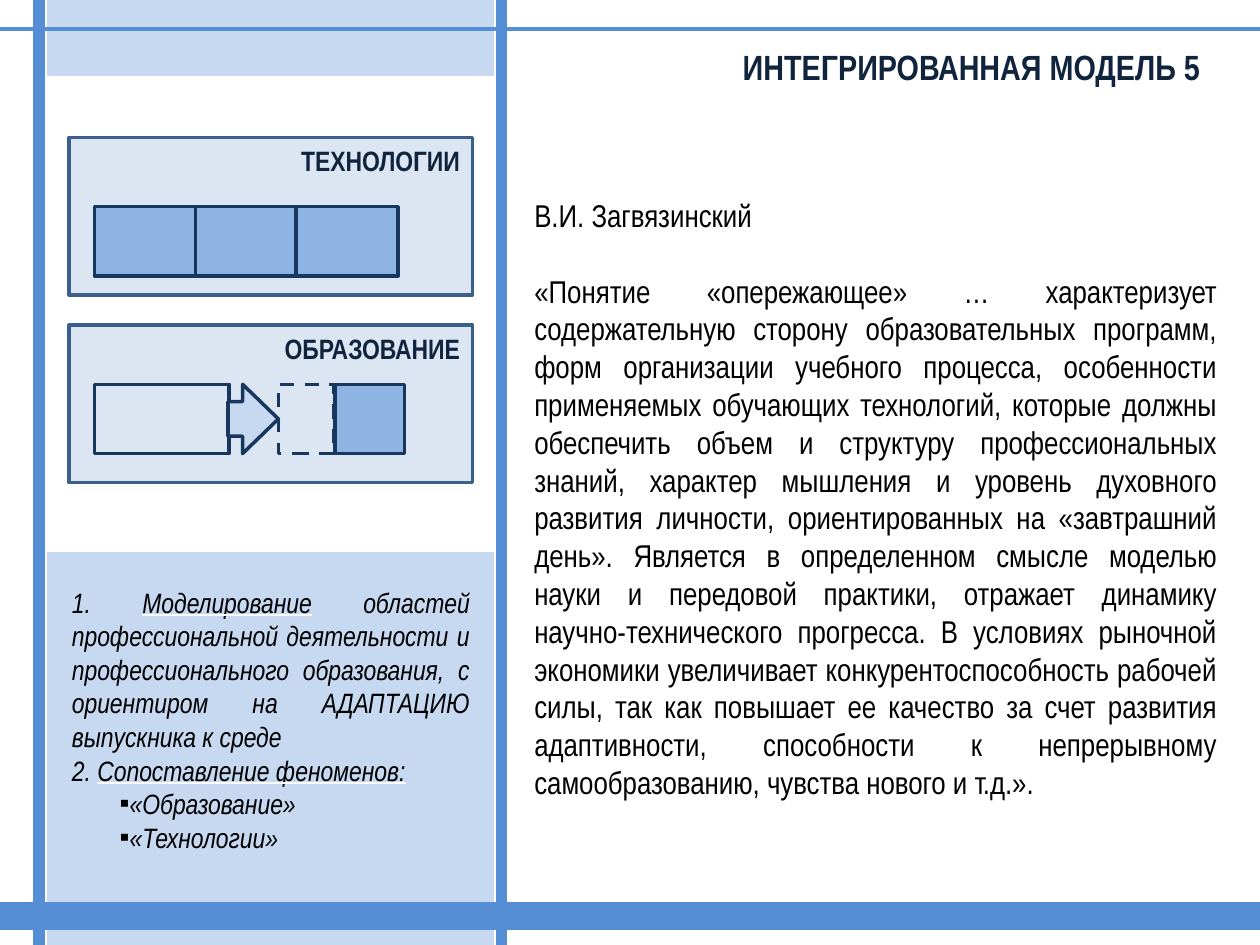
import pptx
import pptx.dml.color
import pptx.enum.dml
import pptx.enum.shapes
import pptx.enum.text
import pptx.oxml
import pptx.oxml.ns
import pptx.util

Inches, Pt = pptx.util.Inches, pptx.util.Pt
SHAPE = pptx.enum.shapes.MSO_SHAPE
ALIGN = pptx.enum.text.PP_ALIGN
ANCHOR = pptx.enum.text.MSO_ANCHOR
FONT = "Arial Narrow"
COLORS = {
    "white": "FFFFFF", "black": "000000", "navy": "10243E",
    "outline": "17375E", "frame": "3A5F8C", "bar": "558ED5",
    "band": "C6D9F1", "card": "DCE6F2", "block": "8EB4E3",
}
QUOTE = (
    "«Понятие «опережающее» … характеризует содержательную сторону "
    "образовательных программ, форм организации учебного процесса, особенности "
    "применяемых обучающих технологий, которые должны обеспечить объем и структуру "
    "профессиональных знаний, характер мышления и уровень духовного развития "
    "личности, ориентированных на «завтрашний день». Является в определенном смысле "
    "моделью науки и передовой практики, отражает динамику научно-технического "
    "прогресса. В условиях рыночной экономики увеличивает конкурентоспособность "
    "рабочей силы, так как повышает ее качество за счет развития адаптивности, "
    "способности к непрерывному самообразованию, чувства нового и т.д.». "
)


def rgb(name):
    return pptx.dml.color.RGBColor.from_string(COLORS[name])


def add_xml(parent, text):
    """Append a DrawingML element written without its namespace declaration."""
    head, rest = text.split(">", 1) if not text.endswith("/>") else (text[:-2], None)
    space = " " + pptx.oxml.ns.nsdecls("a")
    tail = "/>" if rest is None else ">" + rest
    element = pptx.oxml.parse_xml(head + space + tail)
    parent.append(element)
    return element


def add_span(para, text, size, color="black", bold=False, italic=False, underline=False):
    span = para.add_run()
    span.text = text
    font = span.font
    font.size, font.bold, font.italic = Pt(size), bold, italic
    font.underline = underline
    font.color.rgb = rgb(color)
    font.name = FONT
    if underline:  # the underline is white, unlike its text
        fill = add_xml(font._element, '<a:uFill><a:solidFill><a:srgbClr val="%s"/>'
                       "</a:solidFill></a:uFill>" % COLORS["white"])
        font._element.find(pptx.oxml.ns.qn("a:latin")).addprevious(fill)


def add_text(box, spans, first=False, align=ALIGN.JUSTIFY, before=0, bullet=None, **style):
    """Add a paragraph; each span is a text or a pair (text, underline)."""
    frame = box.text_frame
    para = frame.paragraphs[0] if first else frame.add_paragraph()
    para.alignment = align
    para.line_spacing = 1.0
    para.space_before, para.space_after = Pt(before), Pt(0)
    for span in spans:
        text, underline = span if isinstance(span, tuple) else (span, False)
        add_span(para, text, underline=underline, **style)
    properties = para._p.get_or_add_pPr()
    indent = str(Inches(0.19) if bullet else 0)
    properties.set("marL", indent)
    properties.set("indent", indent)
    if bullet:
        add_xml(properties, '<a:buClr><a:srgbClr val="%s"/></a:buClr>' % COLORS["black"])
        add_xml(properties, '<a:buFont typeface="Arial"/>')
        add_xml(properties, '<a:buChar char="%s"/>' % bullet)
    else:
        add_xml(properties, "<a:buNone/>")


def prepare_text(box, anchor):
    frame = box.text_frame
    frame.word_wrap = True
    frame.auto_size = pptx.enum.text.MSO_AUTO_SIZE.NONE
    frame.vertical_anchor = anchor
    frame.margin_left = frame.margin_right = Inches(0.1)
    frame.margin_top = frame.margin_bottom = Inches(0.05)


def place(page, box, left, top, width, height, anchor):
    """Move a placeholder and bring it in front of what is drawn so far."""
    box.left, box.top = Inches(left), Inches(top)
    box.width, box.height = Inches(width), Inches(height)
    prepare_text(box, anchor)
    page.shapes._spTree.append(box._element)


def add_box(page, left, top, width, height, fill=None, line="outline", kind=SHAPE.RECTANGLE):
    box = page.shapes.add_shape(kind, Inches(left), Inches(top), Inches(width), Inches(height))
    box.shadow.inherit = False
    if fill:
        box.fill.solid()
        box.fill.fore_color.rgb = rgb(fill)
    else:
        box.fill.background()
    box.line.color.rgb = rgb(line)
    box.line.width = Pt(2)
    return box


def add_card(page, top, label):
    card = add_box(page, 0.55, top, 3.2, 1.25, "card", "frame")
    prepare_text(card, ANCHOR.TOP)
    add_text(card, [label], first=True, align=ALIGN.RIGHT, size=16, color="navy", bold=True)


def add_bar(page, x1, y1, x2, y2, width):
    bar = page.shapes.add_connector(pptx.enum.shapes.MSO_CONNECTOR.STRAIGHT,
                                    Inches(x1), Inches(y1), Inches(x2), Inches(y2))
    bar.line.color.rgb = rgb("bar")
    bar.line.width = Pt(width)
    add_xml(bar._element.spPr, "<a:effectLst/>")


def main():
    deck = pptx.Presentation()
    deck.slide_width, deck.slide_height = Inches(10), Inches(7.5)
    page = deck.slides.add_slide(deck.slide_layouts[3])
    title, tasks, quote = page.placeholders

    # Side band and horizontal bars
    add_box(page, 0.39, 0, 3.52, 7.5, "band", "band")
    add_bar(page, 0, 0.23, 10, 0.23, 2.25)
    add_bar(page, 0, 7.27, 10, 7.27, 16.25)

    # Title, quotation and list of tasks
    place(page, title, 0, 0.31, 9.69, 0.43, ANCHOR.TOP)
    add_text(title, ["ИНТЕГРИРОВАННАЯ МОДЕЛЬ 5 "], first=True, align=ALIGN.RIGHT,
             size=20, color="navy", bold=True)
    place(page, quote, 4.14, 1.59, 5.62, 4.73, ANCHOR.MIDDLE)
    add_text(quote, ["В.И. Загвязинский"], first=True, size=18)
    add_text(quote, [QUOTE], before=21.6, size=18)
    place(page, tasks, 0.47, 4.47, 3.36, 2.48, ANCHOR.MIDDLE)
    add_text(tasks, ["1. ", ("Моделирование", True),
                     " областей профессиональной деятельности и профессионального "
                     "образования, с ориентиром на АДАПТАЦИЮ выпускника к среде"],
             first=True, size=16, italic=True)
    add_text(tasks, ["2. ", ("Сопоставление феноменов:", True)], size=16, italic=True)
    for item in ("«Образование»", "«Технологии» "):
        add_text(tasks, [item], bullet="▪", size=16, italic=True)

    # Technologies: three adjoining blocks
    add_box(page, 0.31, 0.62, 3.67, 3.75, "white", "white")
    add_card(page, 1.09, "ТЕХНОЛОГИИ")
    for index in range(3):
        add_box(page, 0.75 + 0.8 * index, 1.64, 0.81, 0.55, "block")

    # Education: the present moves towards a missing part
    add_card(page, 2.58, "ОБРАЗОВАНИЕ")
    add_box(page, 0.75, 3.05, 1.07, 0.55)
    missing = add_box(page, 2.21, 3.05, 0.44, 0.55)
    missing.line.dash_style = pptx.enum.dml.MSO_LINE.DASH
    arrow = add_box(page, 1.81, 3.05, 0.4, 0.55, "band", kind=SHAPE.RIGHT_ARROW)
    arrow.adjustments[0], arrow.adjustments[1] = 0.5, 0.71
    add_box(page, 2.66, 3.05, 0.55, 0.55, "block")

    # Vertical bars
    for x in (3.98, 0.31):
        add_bar(page, x, 0, x, 7.5, 6.5)

    deck.save("out.pptx")


if __name__ == "__main__":
    main()
